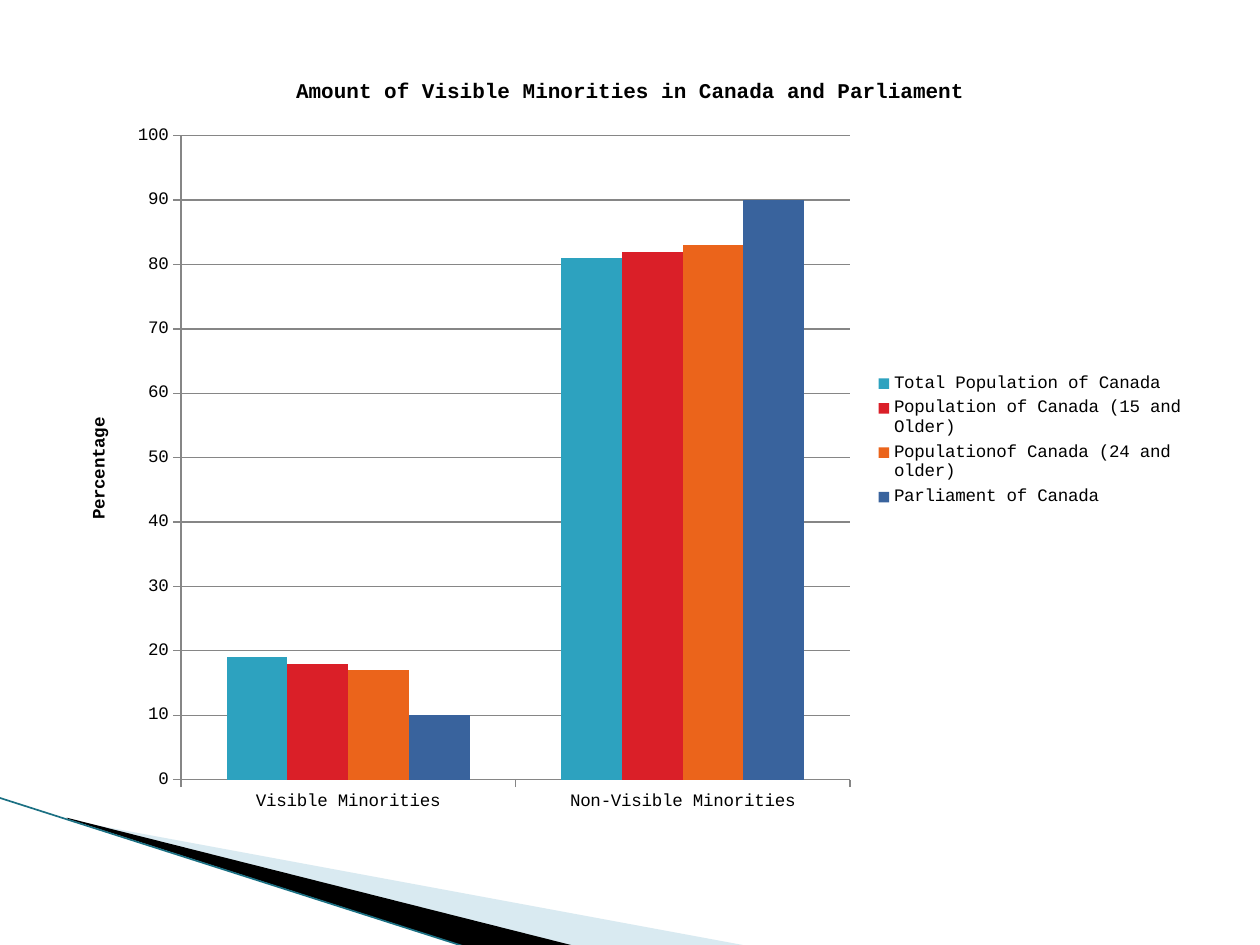
from dataclasses import dataclass

from lxml import etree
from pptx import Presentation
from pptx.chart.data import CategoryChartData
from pptx.dml.color import RGBColor
from pptx.enum.chart import XL_CHART_TYPE, XL_LEGEND_POSITION, XL_TICK_MARK
from pptx.oxml import parse_xml
from pptx.oxml.ns import nsdecls, qn
from pptx.util import Inches, Pt

CLUSTERED = XL_CHART_TYPE.COLUMN_CLUSTERED
RIGHT = XL_LEGEND_POSITION.RIGHT
OUTSIDE = XL_TICK_MARK.OUTSIDE


@dataclass(frozen=True)
class Theme:
    font: str = "Courier New"
    text_size: float = 10
    title_size: float = 12
    text: str = "000000"
    grid: str = "868686"
    band: str = "A0CBDC"
    wedge: str = "000000"
    edge: str = "1B7083"
    series: tuple = ("2DA2BF", "DA1F28", "EB641B", "39639D")


class SlideBuilder:
    def __init__(self, page, theme):
        self.page = page
        self.theme = theme

    def outline(self, points, color, alpha=None):
        corners = [(Inches(x), Inches(y)) for x, y in points]
        builder = self.page.shapes.build_freeform(*corners[0])
        builder.add_line_segments(corners[1:], close=True)
        shape = builder.convert_to_shape()
        shape.shadow.inherit = False
        shape.fill.solid()
        shape.fill.fore_color.rgb = RGBColor.from_string(color)
        shape.line.fill.background()
        if alpha is not None:
            fill = shape.fill._xPr.find(qn("a:solidFill"))
            etree.SubElement(fill[0], qn("a:alpha"), val=str(alpha * 1000))

    def line(self, start, end, color, width):
        ends = [Inches(value) for value in (*start, *end)]
        connector = self.page.shapes.add_connector(1, *ends)
        connector.line.color.rgb = RGBColor.from_string(color)
        connector.line.width = Pt(width)
        etree.SubElement(connector._element.spPr, qn("a:effectLst"))

    def style_font(self, font, size, bold=False):
        font.name = self.theme.font
        font.size = Pt(size)
        font.bold = bold
        font.color.rgb = RGBColor.from_string(self.theme.text)

    def heading(self, owner, text, size):
        frame = owner.text_frame
        frame.text = text
        self.style_font(frame.paragraphs[0].font, size, True)

    def style_line(self, line):
        line.color.rgb = RGBColor.from_string(self.theme.grid)
        line.width = Pt(0.75)

    def place_plot(self, chart, **layout):
        area = chart._chartSpace.chart.plotArea
        for old in area.findall(qn("c:layout")):
            area.remove(old)
        sizes = "".join(f'<c:{name} val="{value}"/>' for name, value in layout.items())
        area.insert(0, parse_xml(
            f'<c:layout {nsdecls("c")}><c:manualLayout><c:layoutTarget val="inner"/>'
            f'<c:xMode val="edge"/><c:yMode val="edge"/>{sizes}'
            "</c:manualLayout></c:layout>"))

    def column_chart(self, frame, title, axis_title, categories, series):
        data = CategoryChartData()
        data.categories = categories
        for name, values in series:
            data.add_series(name, values)
        place = [Inches(value) for value in frame]
        chart = self.page.shapes.add_chart(CLUSTERED, *place, data).chart
        self.style_font(chart.font, self.theme.text_size)
        chart.has_title = True
        self.heading(chart.chart_title, title, self.theme.title_size)
        chart.chart_title.include_in_layout = False

        chart.has_legend = True
        chart.legend.position = RIGHT
        chart.legend.include_in_layout = False

        plot = chart.plots[0]
        plot.gap_width = 150
        plot.overlap = 0
        plot.vary_by_categories = False
        for column, color in zip(plot.series, self.theme.series):
            column.format.fill.solid()
            column.format.fill.fore_color.rgb = RGBColor.from_string(color)

        for axis in (chart.category_axis, chart.value_axis):
            axis.major_tick_mark = OUTSIDE
            self.style_line(axis.format.line)
        scale = chart.value_axis
        scale.minimum_scale, scale.maximum_scale, scale.major_unit = 0, 100, 10
        scale.has_major_gridlines = True
        self.style_line(scale.major_gridlines.format.line)
        self.heading(scale.axis_title, axis_title, self.theme.text_size)
        self.place_plot(chart, x=0.104, y=0.107, w=0.59, h=0.831)


def main():
    deck = Presentation()
    deck.slide_width, deck.slide_height = Inches(10), Inches(7.5)
    theme = Theme()
    slide = SlideBuilder(deck.slides.add_slide(deck.slide_layouts[6]), theme)

    slide.outline([(0.55, 6.51), (5.95, 7.51), (4.56, 7.51), (0.55, 6.5)], theme.band, 40)
    slide.outline([(0.53, 6.49), (4.57, 7.51), (3.72, 7.52), (0.54, 6.5)], theme.wedge)
    slide.line((-0.01, 6.33), (3.71, 7.52), theme.edge, 0.95)
    slide.column_chart(
        (0.5, 0.42, 9, 6.15),
        "Amount of Visible Minorities in Canada and Parliament",
        "Percentage",
        ["Visible Minorities", "Non-Visible Minorities"],
        [
            ("Total Population of Canada", (19, 81)),
            ("Population of Canada (15 and Older)", (18, 82)),
            ("Populationof Canada (24 and older)", (17, 83)),
            ("Parliament of Canada", (10, 90)),
        ],
    )
    deck.save("out.pptx")


if __name__ == "__main__":
    main()
